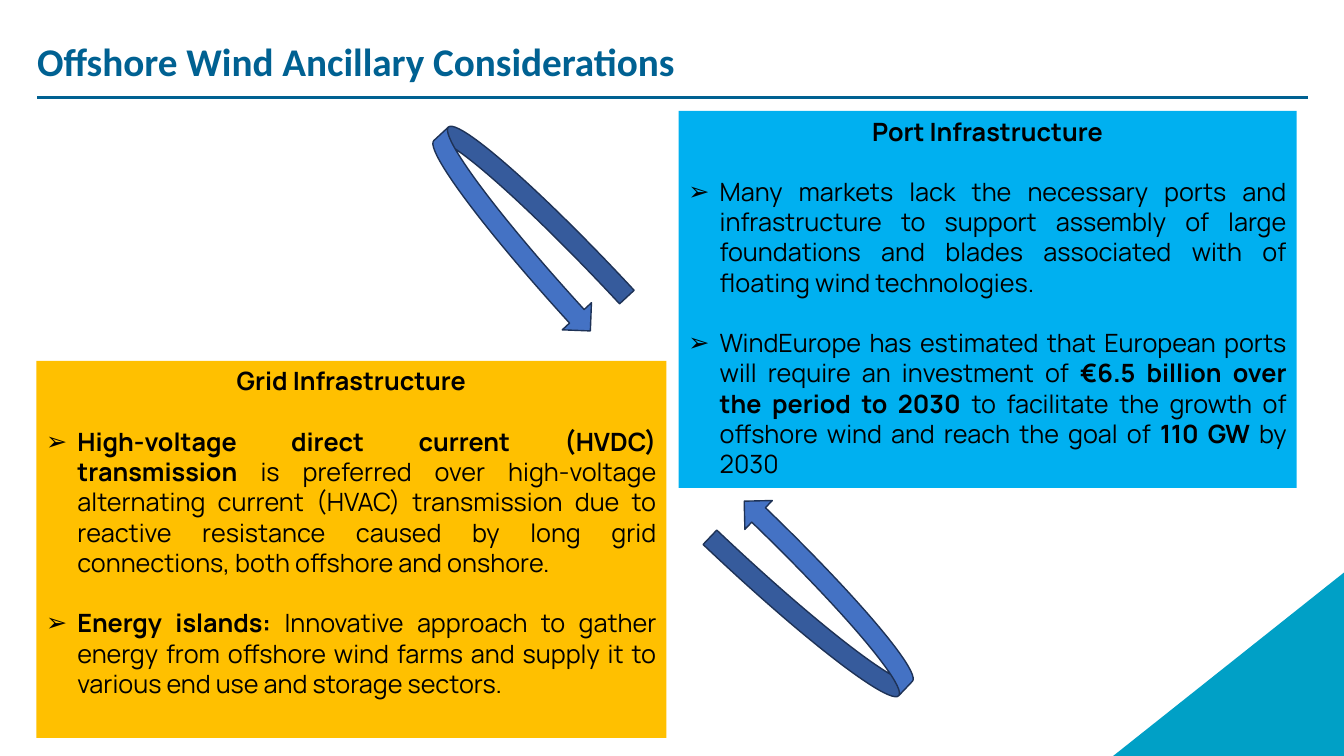
from dataclasses import dataclass

from lxml.etree import SubElement
from pptx import Presentation
from pptx.dml.color import RGBColor
from pptx.enum.shapes import MSO_CONNECTOR, MSO_SHAPE
from pptx.enum.text import MSO_ANCHOR, MSO_AUTO_SIZE, PP_ALIGN
from pptx.oxml.ns import qn
from pptx.util import Inches, Pt

NAVY = RGBColor(0x00, 0x61, 0x92)
TEAL = RGBColor(0x00, 0xA0, 0xC6)
AMBER = RGBColor(0xFF, 0xC0, 0x00)
SKY = RGBColor(0x00, 0xB0, 0xF0)
ARROW_FILL = RGBColor(0x44, 0x72, 0xC4)
ARROW_EDGE = RGBColor(0x1E, 0x32, 0x56)
BLACK = RGBColor(0x00, 0x00, 0x00)

BULLET_INDENT = Inches(0.31)
BLANK_LINE = Pt(21.6)


@dataclass(frozen=True)
class Span:
    text: str
    bold: bool = False


@dataclass(frozen=True)
class Panel:
    heading: str
    left: float
    top: float
    width: float
    color: RGBColor
    bullets: tuple[tuple[Span, ...], ...]
    height: float = 3.74


@dataclass(frozen=True)
class LoopArrow:
    left: float
    top: float
    rotation: float
    width: float = 2.44
    height: float = 0.79


PANELS = (
    Panel("Grid Infrastructure", 0.36, 3.58, 6.25, AMBER, (
        (Span("High-voltage direct current (HVDC) transmission ", True),
         Span("is preferred over high-voltage alternating current (HVAC) "
              "transmission due to reactive resistance caused by long grid "
              "connections, both offshore and onshore.")),
        (Span("Energy islands: ", True),
         Span("Innovative approach to gather energy from offshore wind farms "
              "and supply it to various end use and storage sectors.")),
    )),
    Panel("Port Infrastructure", 6.73, 1.1, 6.13, SKY, (
        (Span("Many markets lack the necessary ports and infrastructure to "
              "support assembly of large foundations and blades associated "
              "with of floating wind technologies."),),
        (Span("WindEurope has estimated that European ports will require an "
              "investment of "),
         Span("€6.5 billion over the period to 2030 ", True),
         Span("to facilitate the growth of offshore wind and reach the goal of "),
         Span("110 GW ", True),
         Span("by 2030")),
    )),
)

LOOP_ARROWS = (LoopArrow(3.95, 1.86, 47.1), LoopArrow(6.91, 5.56, 223.5))


def add_filled(page, kind, left: float, top: float, width: float,
               height: float, color: RGBColor):
    shape = page.shapes.add_shape(kind, Inches(left), Inches(top),
                                  Inches(width), Inches(height))
    shape.shadow.inherit = False
    shape.fill.solid()
    shape.fill.fore_color.rgb = color
    shape.line.fill.background()
    return shape


def add_span(para, text: str, *, size: float = 18, font: str = "Manrope",
             color: RGBColor = BLACK, bold: bool = False) -> None:
    run = para.add_run()
    run.text = text
    run.font.size = Pt(size)
    run.font.name = font
    run.font.color.rgb = color
    run.font.bold = bold


def make_bullet(para) -> None:
    properties = para._p.get_or_add_pPr()
    properties.set("marL", str(BULLET_INDENT))
    properties.set("indent", str(-BULLET_INDENT))
    para.space_before = BLANK_LINE
    SubElement(properties, qn("a:buFont"), typeface="Arial")
    SubElement(properties, qn("a:buChar"), char="➢")


def add_panel(page, panel: Panel) -> None:
    box = add_filled(page, MSO_SHAPE.RECTANGLE, panel.left, panel.top,
                     panel.width, panel.height, panel.color)
    frame = box.text_frame
    frame.word_wrap = True
    frame.auto_size = MSO_AUTO_SIZE.SHAPE_TO_FIT_TEXT
    frame.vertical_anchor = MSO_ANCHOR.TOP
    heading = frame.paragraphs[0]
    heading.alignment = PP_ALIGN.CENTER
    add_span(heading, panel.heading, bold=True)
    for spans in panel.bullets:
        para = frame.add_paragraph()
        para.alignment = PP_ALIGN.JUSTIFY
        make_bullet(para)
        for span in spans:
            add_span(para, span.text, bold=span.bold)


def add_loop_arrow(page, arrow: LoopArrow) -> None:
    shape = add_filled(page, MSO_SHAPE.CURVED_RIGHT_ARROW, arrow.left,
                       arrow.top, arrow.width, arrow.height, ARROW_FILL)
    shape.line.color.rgb = ARROW_EDGE
    shape.line.width = Pt(1)
    shape.rotation = arrow.rotation


def add_corner(page) -> None:
    corner = add_filled(page, MSO_SHAPE.RIGHT_TRIANGLE,
                        11.04, 5.68, 2.29, 1.82, TEAL)
    corner._element.spPr.get_or_add_xfrm().set("flipH", "1")


def add_title(page, text: str) -> None:
    rule = page.shapes.add_connector(MSO_CONNECTOR.STRAIGHT, Inches(0.37),
                                     Inches(0.97), Inches(12.97), Inches(0.97))
    rule.line.color.rgb = NAVY
    rule.line.width = Pt(2.25)
    SubElement(rule._element.spPr, qn("a:effectLst"))

    box = page.shapes.add_textbox(Inches(0.27), Inches(0.18),
                                  Inches(12.67), Inches(0.91))
    box.text_frame.word_wrap = True
    box.text_frame.vertical_anchor = MSO_ANCHOR.MIDDLE
    para = box.text_frame.paragraphs[0]
    para.line_spacing = 0.9
    add_span(para, text, size=28, font="Calibri", color=NAVY, bold=True)


def main() -> None:
    deck = Presentation()
    deck.slide_width = Inches(13.33)
    deck.slide_height = Inches(7.5)
    page = deck.slides.add_slide(deck.slide_layouts[6])

    # Frame of the slide
    add_corner(page)
    add_title(page, "Offshore Wind Ancillary Considerations")

    # Two topics and the loop between them
    for panel in PANELS:
        add_panel(page, panel)
    for arrow in LOOP_ARROWS:
        add_loop_arrow(page, arrow)

    deck.save("out.pptx")


if __name__ == "__main__":
    main()
